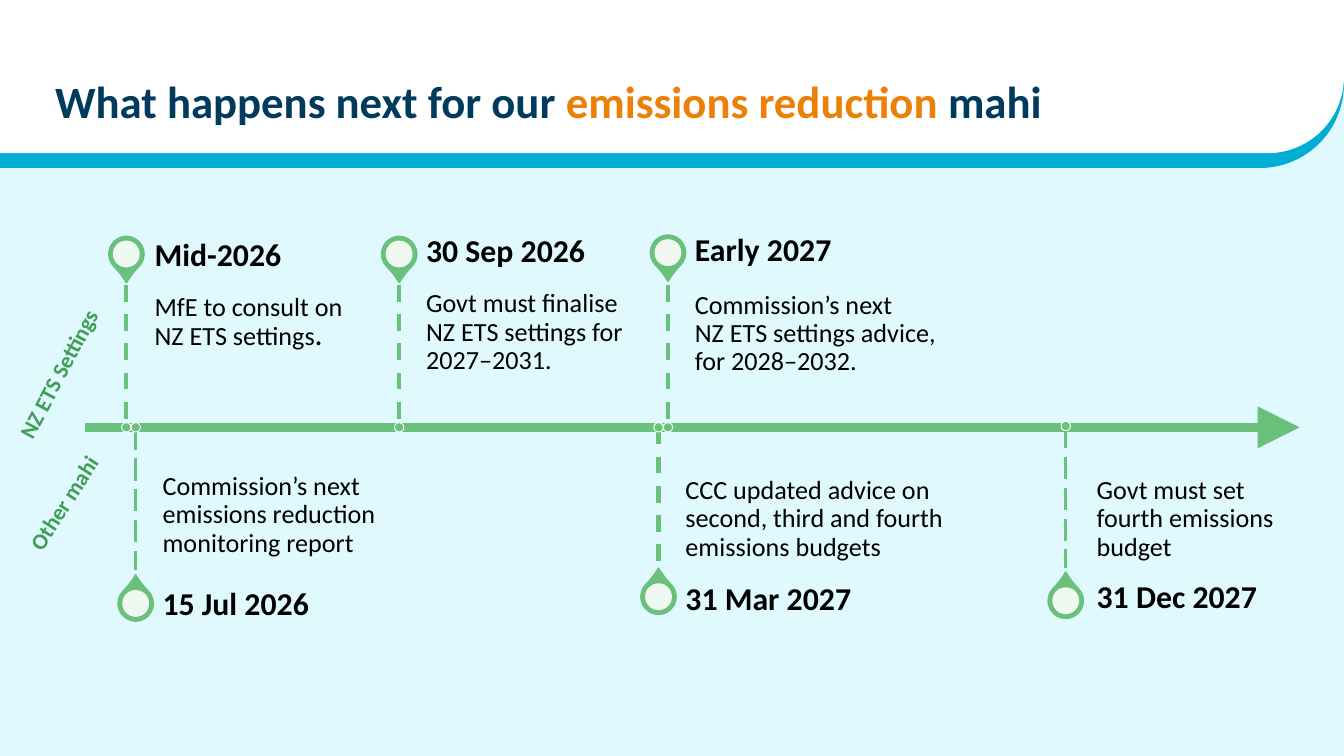
from dataclasses import dataclass

from lxml.etree import SubElement
from pptx import Presentation
from pptx.dml.color import RGBColor
from pptx.enum.dml import MSO_LINE
from pptx.enum.shapes import MSO_CONNECTOR, MSO_SHAPE
from pptx.enum.text import MSO_ANCHOR, PP_ALIGN
from pptx.oxml.ns import qn
from pptx.util import Inches, Pt

HUES = {
    "white": "FFFFFF", "pale": "C3F4FF", "blue": "00ADD3", "navy": "003A5D",
    "orange": "EC8006", "green": "69C17B", "leaf": "419E54", "black": "000000",
}
WIDE = 10
HIGH = WIDE * 9 / 16
AXIS = 3.18
PIN, DISC, DOT = 0.26, 0.2, 0.07


@dataclass
class Event:
    date: str
    note: str
    above: bool
    x: float
    pin: float
    left: float
    width: float
    head: tuple[float, float]
    body: tuple[float, float]
    stem: float = 2.25
    dash: MSO_LINE = MSO_LINE.DASH
    mark: str = ""
    axis: float = AXIS


@dataclass
class Label:
    text: str
    box: tuple[float, float, float, float]
    angle: float


EVENTS = [
    Event("Mid-2026", "MfE to consult on NZ ETS settings", True,
          0.94, 1.89, 1.15, 1.68, (1.72, 0.37), (2.09, 1.06), mark="."),
    Event("15 Jul 2026", "Commission’s next \vemissions reduction monitoring report", False,
          1.01, 4.49, 1.21, 1.78, (4.34, 0.33), (3.32, 0.93), 1.5, MSO_LINE.LONG_DASH),
    Event("30 Sep 2026", "Govt must finalise NZ ETS settings for 2027–2031.", True,
          2.97, 1.89, 3.17, 1.59, (1.69, 0.37), (2.06, 1.06)),
    Event("31 Mar 2027", "CCC updated advice on second, third and fourth emissions budgets", False,
          4.9, 4.44, 5.1, 2.15, (4.28, 0.37), (3.22, 1.06)),
    Event("Early 2027", "Commission’s next \vNZ ETS settings advice, for 2028–2032.", True,
          4.97, 1.88, 5.17, 2.12, (1.69, 0.36), (2.07, 1.03)),
    Event("31 Dec 2027", "Govt must set fourth emissions budget", False,
          7.93, 4.47, 8.16, 1.38, (4.27, 0.37), (3.22, 1.06), 1.5, MSO_LINE.LONG_DASH,
          axis=3.17),
]
LABELS = [
    Label("NZ ETS Settings", (-0.22, 2.58, 1.36, 0.3), 297.9),
    Label("Other mahi", (-0.08, 3.48, 1.25, 0.3), 302.8),
]


def tint(hue: str) -> RGBColor:
    return RGBColor.from_string(HUES[hue])


def apply(target, values: dict) -> None:
    for name, value in values.items():
        setattr(target, name, value)


def style(font, size: float, hue: str, bold: bool = False) -> None:
    apply(font, {"name": "Calibri", "size": Pt(size), "bold": bold})
    font.color.rgb = tint(hue)


def shape(slide, kind, box, hue: str, edge: str = "", width: float = 1, alpha: int = 100):
    item = slide.shapes.add_shape(kind, *map(Inches, box))
    item.shadow.inherit = False
    item.fill.solid()
    item.fill.fore_color.rgb = tint(hue)
    if alpha < 100:
        color = item.element.spPr.find(".//" + qn("a:srgbClr"))
        SubElement(color, qn("a:alpha"), val=str(alpha * 1000))
    if edge:
        item.line.color.rgb = tint(edge)
        item.line.width = Pt(width)
    else:
        item.line.fill.background()
    return item


def disc(slide, x: float, y: float, size: float, hue: str, edge: str = "",
         width: float = 1, alpha: int = 100, kind=MSO_SHAPE.OVAL):
    box = (x - size / 2, y - size / 2, size, size)
    return shape(slide, kind, box, hue, edge, width, alpha)


def line(slide, start, end, width: float):
    item = slide.shapes.add_connector(MSO_CONNECTOR.STRAIGHT, *map(Inches, start + end))
    item.line.color.rgb = tint("green")
    item.line.width = Pt(width)
    SubElement(item.element.spPr, qn("a:effectLst"))
    return item


def text(slide, box, words: str, size: float, hue: str, bold: bool, anchor, pads):
    item = slide.shapes.add_textbox(*map(Inches, box))
    frame = item.text_frame
    sides = ("margin_left", "margin_top", "margin_right", "margin_bottom")
    apply(frame, {"word_wrap": True, "vertical_anchor": anchor,
                  **dict(zip(sides, map(Inches, pads)))})
    part = frame.paragraphs[0]
    part.text = words
    part.line_spacing = 0.9
    for run in part.runs:
        style(run.font, size, hue, bold)
    return item


def event(slide, item: Event) -> None:
    drop = disc(slide, item.x, item.pin, PIN, "green", "green", kind=MSO_SHAPE.TEAR)
    drop.adjustments[0] = 1.15
    drop.rotation = 135 if item.above else 315
    disc(slide, item.x, item.pin, DISC, "white", alpha=90)

    anchor = MSO_ANCHOR.TOP if item.above else MSO_ANCHOR.BOTTOM
    pads = (0, 0.1, 0.1, 0.15) if item.above else (0, 0.15, 0, 0.1)
    top, high = item.body
    note = text(slide, (item.left, top, item.width, high), item.note,
                14, "black", False, anchor, pads)
    if item.mark:
        run = note.text_frame.paragraphs[0].add_run()
        run.text = item.mark
        style(run.font, 14, "black", True)
    top, high = item.head
    text(slide, (item.left, top, item.width, high), item.date,
         17, "black", True, MSO_ANCHOR.MIDDLE, (0, 0, 0.12, 0))

    ends = (item.axis - 1.06, item.axis) if item.above else (item.axis, item.axis + 1.06)
    stem = line(slide, (item.x, ends[0]), (item.x, ends[1]), item.stem)
    stem.line.dash_style = item.dash
    disc(slide, item.x, item.axis, DOT, "green", "white", 0.5)


def banner(slide) -> None:
    shape(slide, MSO_SHAPE.RECTANGLE, (0, 0, WIDE, HIGH), "pale", alpha=50)
    for high, hue in ((1.25, "blue"), (1.14, "white")):
        band = shape(slide, MSO_SHAPE.ROUND_1_RECTANGLE, (0, 0, WIDE, high), hue)
        band.adjustments[0] = 0.5
        band.rotation = 180
        band.element.spPr.xfrm.set("flipH", "1")


def heading(slide) -> None:
    title = slide.shapes.title
    title.element.getparent().append(title.element)
    apply(title, {"left": Inches(0.41), "top": Inches(0.3),
                  "width": Inches(8.9), "height": Inches(0.94)})
    frame = title.text_frame
    apply(frame, {"margin_left": 0, "margin_top": 0, "margin_right": 0, "margin_bottom": 0,
                  "word_wrap": True, "vertical_anchor": MSO_ANCHOR.MIDDLE})
    part = frame.paragraphs[0]
    apply(part, {"alignment": PP_ALIGN.LEFT, "line_spacing": 0.9})
    for words, hue in (("What happens next for our ", "navy"),
                       ("emissions reduction", "orange"), (" mahi", "navy")):
        run = part.add_run()
        run.text = words
        style(run.font, 24, hue, True)


def main() -> None:
    deck = Presentation()
    apply(deck, {"slide_width": Inches(WIDE), "slide_height": Inches(HIGH)})
    slide = deck.slides.add_slide(deck.slide_layouts[5])
    banner(slide)
    heading(slide)
    axis = line(slide, (0.63, AXIS), (9.67, AXIS), 4.5)
    SubElement(axis.element.spPr.find(qn("a:ln")), qn("a:tailEnd"),
               type="triangle", w="lg", len="lg")
    for item in EVENTS:
        event(slide, item)
    for label in LABELS:
        side = text(slide, label.box, label.text, 12, "leaf", True,
                    MSO_ANCHOR.TOP, (0.1, 0.05, 0.1, 0.05))
        side.text_frame.paragraphs[0].line_spacing = 1.0
        side.rotation = label.angle
    deck.save("out.pptx")


if __name__ == "__main__":
    main()
